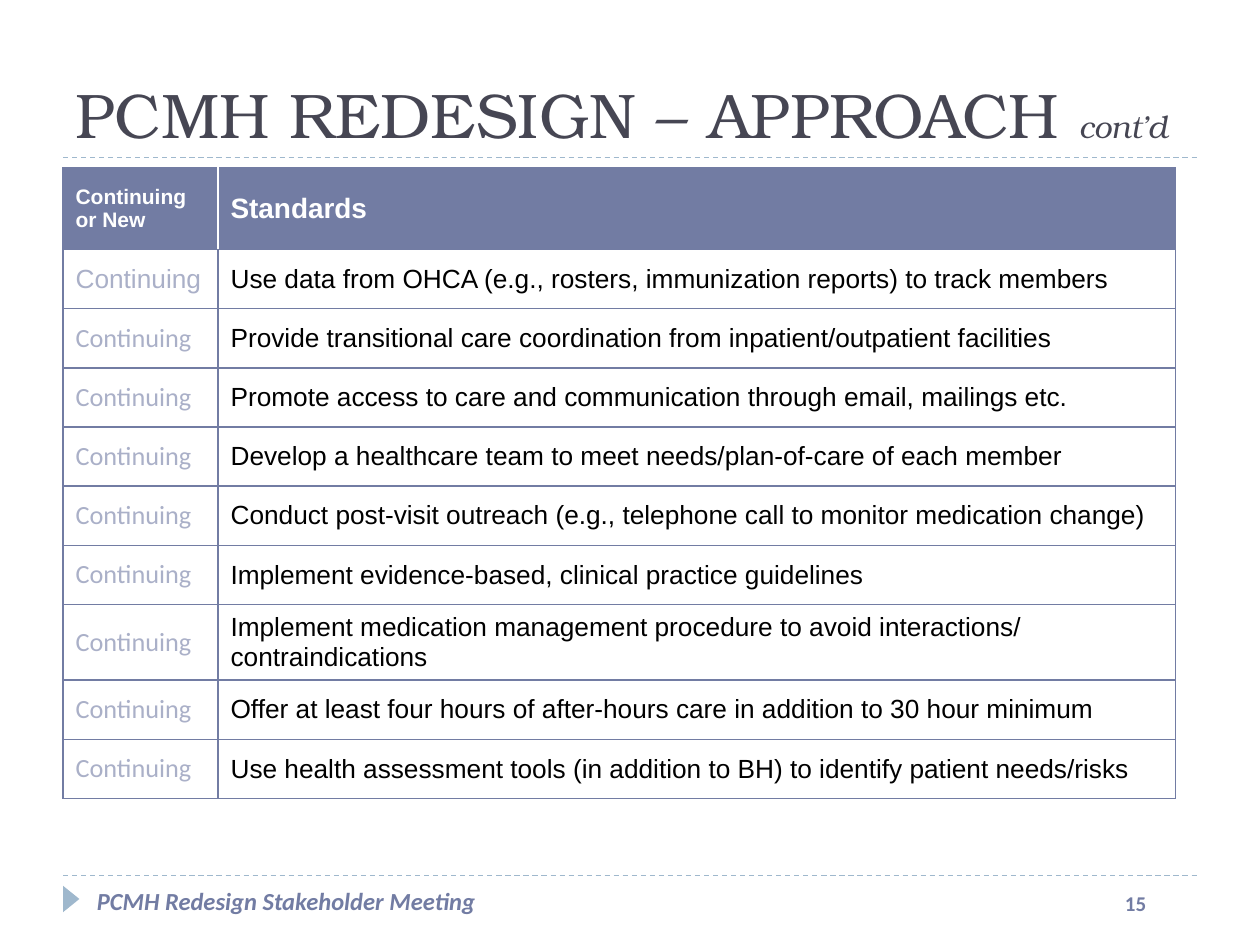
from dataclasses import dataclass

from lxml.etree import SubElement
from pptx import Presentation
from pptx.dml.color import RGBColor
from pptx.enum.dml import MSO_LINE
from pptx.enum.shapes import MSO_CONNECTOR, MSO_SHAPE
from pptx.enum.text import MSO_ANCHOR, MSO_AUTO_SIZE, PP_ALIGN
from pptx.oxml.ns import qn
from pptx.util import Inches, Pt


@dataclass(frozen=True)
class Theme:
    accent: str = "727CA3"
    accent_pale: str = "AAB0C8"
    rule: str = "9FB8CD"
    title: str = "464653"
    body: str = "000000"
    white: str = "FFFFFF"
    title_font: str = "TeX Gyre Bonum"
    body_font: str = "Arial"
    footer_font: str = "Calibri"
    title_size: float = 36
    suffix_size: float = 18
    header_size: float = 16
    small_header_size: float = 12
    cell_size: float = 15
    footer_size: float = 14
    number_size: float = 12
    outer_border: float = 0.75
    inner_border: float = 1


THEME = Theme()

STANDARDS = [
    "Use data from OHCA (e.g., rosters, immunization reports) to track members",
    "Provide transitional care coordination from inpatient/outpatient facilities",
    "Promote access to care and communication through email, mailings etc.",
    "Develop a healthcare team to meet needs/plan-of-care of each member",
    "Conduct post-visit outreach (e.g., telephone call to monitor medication change)",
    "Implement evidence-based, clinical practice guidelines",
    "Implement medication management procedure to avoid interactions/ contraindications",
    "Offer at least four hours of after-hours care in addition to 30 hour minimum",
    "Use health assessment tools (in addition to BH) to identify patient needs/risks",
]


def style_run(run, font, size, color, bold=False, italic=False):
    run.font.name = font
    run.font.size = Pt(size)
    run.font.color.rgb = RGBColor.from_string(color)
    run.font.bold = bold
    run.font.italic = italic


def place(shape, left, top, width, height):
    shape.left, shape.top = Inches(left), Inches(top)
    shape.width, shape.height = Inches(width), Inches(height)


def add_dashed_rule(slide, left, top, width):
    rule = slide.shapes.add_connector(
        MSO_CONNECTOR.STRAIGHT, Inches(left), Inches(top), Inches(left + width), Inches(top))
    rule.line.color.rgb = RGBColor.from_string(THEME.rule)
    rule.line.width = Pt(0.75)
    rule.line.dash_style = MSO_LINE.DASH
    SubElement(rule._element.spPr, qn("a:effectLst"))


def add_text(slide, left, top, width, height, text, **style):
    box = slide.shapes.add_textbox(Inches(left), Inches(top), Inches(width), Inches(height))
    box.text_frame.word_wrap = True
    box.text_frame.text = text
    style_run(box.text_frame.paragraphs[0].runs[0], **style)


def add_title(slide, left, top, width, height):
    """Fill the title placeholder and underline it with a dashed rule."""
    title = slide.shapes.title
    place(title, left, top, width, height)
    frame = title.text_frame
    frame.auto_size = MSO_AUTO_SIZE.NONE
    frame.vertical_anchor = MSO_ANCHOR.BOTTOM
    frame.text = "PCMH REDESIGN – APPROACH "
    paragraph = frame.paragraphs[0]
    paragraph.alignment = PP_ALIGN.LEFT
    style_run(paragraph.runs[0], THEME.title_font, THEME.title_size, THEME.title)
    suffix = paragraph.add_run()
    suffix.text = "cont’d"
    style_run(suffix, THEME.title_font, THEME.suffix_size, THEME.title, italic=True)
    add_dashed_rule(slide, left, top + height, width)


def set_borders(cell, borders):
    """Draw borders given as (color, points) in the order left, right, top, bottom."""
    properties = cell._tc.get_or_add_tcPr()
    for side, (color, points) in zip("LRTB", borders):
        line = SubElement(properties, qn(f"a:ln{side}"), w=str(Pt(points)))
        fill = SubElement(line, qn("a:solidFill"))
        SubElement(fill, qn("a:srgbClr"), val=color)


def cell_borders(row, column, last_row):
    outer = (THEME.accent, THEME.outer_border)
    inner = (THEME.accent, THEME.inner_border)
    divider = (THEME.white, THEME.inner_border) if row == 0 else inner
    left, right = (outer, divider) if column == 0 else (divider, outer)
    top = outer if row <= 1 else inner
    bottom = outer if row in (0, last_row) else inner
    return left, right, top, bottom


def cell_style(row, column):
    if row == 0:
        size = THEME.small_header_size if column == 0 else THEME.header_size
        return dict(font=THEME.body_font, size=size, color=THEME.white, bold=True)
    if column == 1:
        return dict(font=THEME.body_font, size=THEME.cell_size, color=THEME.body)
    font = THEME.body_font if row == 1 else THEME.footer_font
    return dict(font=font, size=THEME.cell_size, color=THEME.accent_pale)


def add_standards_table(slide, left, top, width, height):
    rows = [("Continuing or New", "Standards")]
    rows += [("Continuing", standard) for standard in STANDARDS]
    last_row = len(rows) - 1
    header_height, status_width = 0.65, 1.23
    table = slide.shapes.add_table(
        len(rows), 2, Inches(left), Inches(top), Inches(width), Inches(height)).table
    table.horz_banding = False
    table.columns[0].width = Inches(status_width)
    table.columns[1].width = Inches(width - status_width)
    for row, texts in enumerate(rows):
        row_height = header_height if row == 0 else (height - header_height) / last_row
        table.rows[row].height = Inches(row_height)
        for column, text in enumerate(texts):
            cell = table.cell(row, column)
            cell.text = text
            cell.vertical_anchor = MSO_ANCHOR.MIDDLE
            style_run(cell.text_frame.paragraphs[0].runs[0], **cell_style(row, column))
            set_borders(cell, cell_borders(row, column, last_row))
            if row == 0:
                cell.fill.solid()
                cell.fill.fore_color.rgb = RGBColor.from_string(THEME.accent)
            else:
                cell.fill.background()


def add_footer(slide, left, top, width):
    add_dashed_rule(slide, left, top, width)
    marker = slide.shapes.add_shape(
        MSO_SHAPE.ISOSCELES_TRIANGLE,
        Inches(left - 0.04), Inches(top + 0.12), Inches(0.21), Inches(0.13))
    marker.rotation = 90
    marker.shadow.inherit = False
    marker.fill.solid()
    marker.fill.fore_color.rgb = RGBColor.from_string(THEME.rule)
    marker.line.fill.background()
    add_text(slide, left + width - 0.67, top + 0.07, 0.58, 0.4, "15",
             font=THEME.footer_font, size=THEME.number_size, color=THEME.accent, bold=True)
    add_text(slide, left + 0.17, top + 0.03, 4.5, 0.52, "PCMH Redesign Stakeholder Meeting",
             font=THEME.footer_font, size=THEME.footer_size, color=THEME.accent,
             bold=True, italic=True)


def main():
    presentation = Presentation()
    presentation.slide_width, presentation.slide_height = Inches(10), Inches(7.5)
    slide = presentation.slides.add_slide(presentation.slide_layouts[5])
    add_footer(slide, 0.5, 6.95, 9)
    add_title(slide, 0.5, 0.17, 9, 1.08)
    add_standards_table(slide, 0.5, 1.33, 8.83, 4.88)
    presentation.save("out.pptx")


if __name__ == "__main__":
    main()
